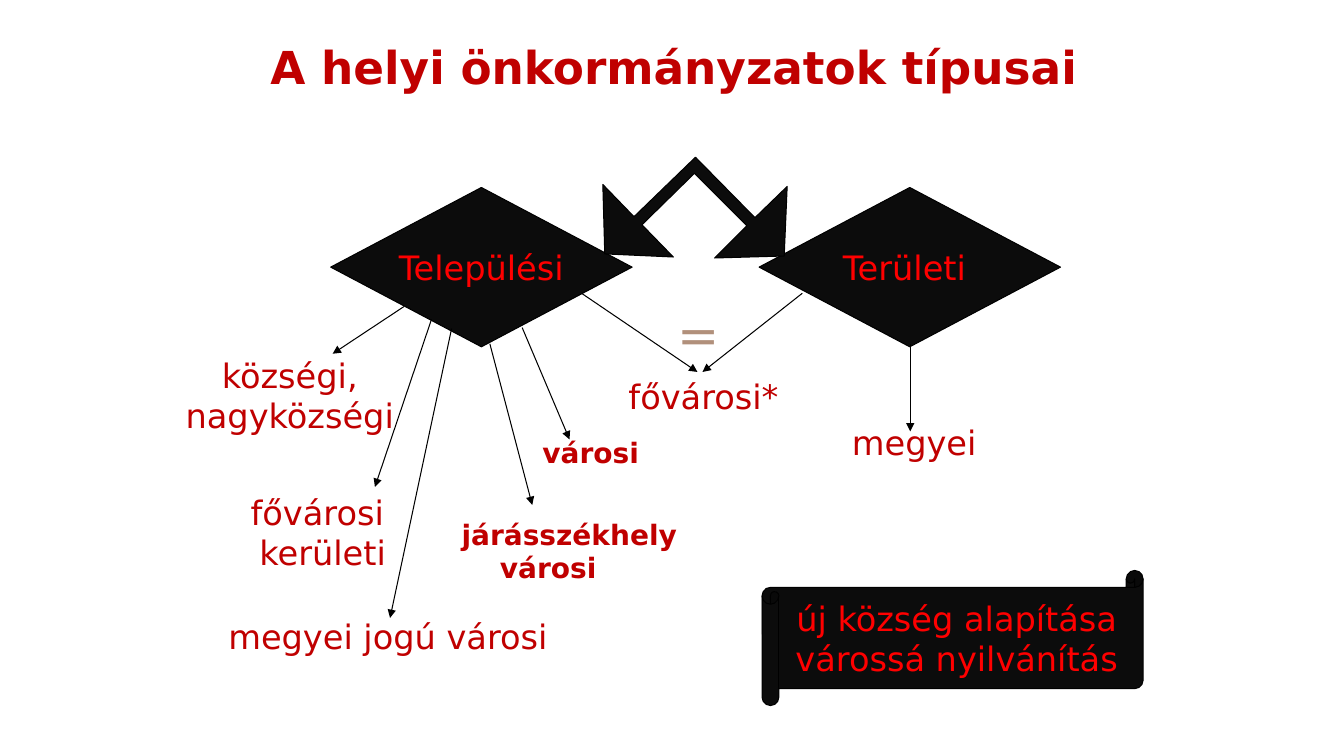
from dataclasses import dataclass

from lxml import etree
from pptx import Presentation
from pptx import util as u
from pptx.dml.color import RGBColor
from pptx.enum import shapes, text
from pptx.oxml import ns


@dataclass(frozen=True)
class Theme:
    font: str = "DejaVu Sans"
    heading: str = "C00000"
    on_dark: str = "FF0000"
    dark: str = "0C0C0C"
    line: str = "000000"
    equals: str = "B1907B"
    title_size: float = 32.4
    equals_size: float = 36
    label_size: float = 24
    small_size: float = 20
    line_width: float = 0.75


THEME = Theme()
CENTER = text.PP_ALIGN.CENTER
LEFT = text.PP_ALIGN.LEFT

# Left, top, width, height in points
DIAMONDS = [
    ("Települési", (236.2, 133.9, 215.3, 113.8)),
    ("Területi ", (542.2, 133.9, 215.3, 113.8)),
]
SCROLL = ("új község alapítása\nvárossá nyilvánítás", (544.3, 407.5, 272.2, 96.5))
LABELS = [
    ("községi, nagyközségi", (123.1, 249.8, 167.8, 65.5)),
    ("megyei jogú városi", (154.8, 436.3, 244.8, 36)),
    ("fővárosi*", (439.9, 265, 125.3, 36.7)),
    ("megyei", (568.1, 298.1, 169.9, 36)),
    ("fővárosi \nkerületi", (128.2, 347.8, 204.5, 65.5)),
]
# Start x, start y, end x, end y in points
ARROWS = [
    (288.7, 218.9, 237.6, 252.7),
    (308.2, 228.2, 267.8, 347.8),
    (322.6, 234.7, 278.6, 441.4),
    (349.9, 245.5, 380.2, 360.7),
    (373, 234, 406.8, 313.9),
    (415.4, 209.5, 498.2, 265.7),
    (573.1, 209.5, 501.8, 265.7),
    (650.2, 245.5, 650.2, 308.2),
]
DOUBLE_ARROW = [
    (432, 181.4), (481, 183.6), (458.6, 160.6), (496.1, 123.8),
    (533.5, 161.3), (510.5, 184.3), (560.2, 182.9), (562.3, 133.2),
    (539.3, 155.5), (496.8, 112.3), (452.9, 154.8), (430.6, 131.8),
]


def points(values):
    return [u.Pt(value) for value in values]


def write(shape, content, size, color, bold=False, align=CENTER, wrap=True):
    frame = shape.text_frame
    frame.text = content
    frame.word_wrap = wrap
    frame.auto_size = text.MSO_AUTO_SIZE.NONE
    for paragraph in frame.paragraphs:
        paragraph.alignment = align
        paragraph.space_before = u.Pt(0)
        for run in paragraph.runs:
            run.font.name = THEME.font
            run.font.size = u.Pt(size)
            run.font.bold = bold
            run.font.color.rgb = RGBColor.from_string(color)


def hang(shape, indent):
    """Hanging indent without a bullet."""
    for paragraph in shape.text_frame.paragraphs:
        properties = paragraph._p.get_or_add_pPr()
        properties.set("marL", str(u.Pt(indent)))
        properties.set("indent", str(-u.Pt(indent)))
        etree.SubElement(properties, ns.qn("a:buNone"))


def fill_placeholder(shape, box, content, size, align):
    shape.left, shape.top, shape.width, shape.height = points(box)
    write(shape, content, size, THEME.heading, True, align)
    shape.text_frame.paragraphs[0].line_spacing = 0.9


def paint(shape):
    shape.shadow.inherit = False
    shape.fill.solid()
    shape.fill.fore_color.rgb = RGBColor.from_string(THEME.dark)
    shape.line.color.rgb = RGBColor.from_string(THEME.line)
    shape.line.width = u.Pt(THEME.line_width)


def add_dark_shape(slide, kind, content, box):
    shape = slide.shapes.add_shape(kind, *points(box))
    paint(shape)
    write(shape, content, THEME.label_size, THEME.on_dark, wrap=False)
    shape.text_frame.vertical_anchor = text.MSO_ANCHOR.MIDDLE


def add_label(slide, content, box, size=THEME.label_size, color=THEME.heading,
              bold=False, align=CENTER):
    shape = slide.shapes.add_textbox(*points(box))
    write(shape, content, size, color, bold, align)
    return shape


def add_arrow(slide, ends):
    arrow = slide.shapes.add_connector(shapes.MSO_CONNECTOR.STRAIGHT, *points(ends))
    arrow.line.color.rgb = RGBColor.from_string(THEME.line)
    arrow.line.width = u.Pt(THEME.line_width)
    etree.SubElement(arrow.line._get_or_add_ln(), ns.qn("a:tailEnd"), type="triangle")
    etree.SubElement(arrow._element.spPr, ns.qn("a:effectLst"))


def add_outline(slide, corners):
    start, *others = [points(corner) for corner in corners]
    builder = slide.shapes.build_freeform(*start)
    builder.add_line_segments(others, close=True)
    paint(builder.convert_to_shape())


def main():
    presentation = Presentation()
    presentation.slide_width, presentation.slide_height = u.Pt(960), u.Pt(540)
    slide = presentation.slides.add_slide(presentation.slide_layouts[1])

    # Title and list item
    fill_placeholder(slide.shapes.title, (146.2, 32.4, 670.3, 35.3),
                     "A helyi önkormányzatok típusai", THEME.title_size, CENTER)
    town = slide.placeholders[1]
    fill_placeholder(town, (380.2, 310.3, 87.1, 36), "városi", THEME.small_size, LEFT)
    hang(town, 18)

    # Two main types and the double arrow between them
    for content, box in DIAMONDS:
        add_dark_shape(slide, shapes.MSO_SHAPE.DIAMOND, content, box)
    add_outline(slide, DOUBLE_ARROW)
    add_label(slide, "=", (439.9, 213.1, 118.8, 50.4), THEME.equals_size, THEME.equals)

    # Subtypes
    for content, box in LABELS:
        add_label(slide, content, box)
    district_seat = add_label(slide, "járásszékhely városi", (322.6, 365.8, 175.7, 79.2),
                              THEME.small_size, bold=True, align=LEFT)
    hang(district_seat, 27.4)
    for ends in ARROWS:
        add_arrow(slide, ends)

    # Scroll note
    add_dark_shape(slide, shapes.MSO_SHAPE.HORIZONTAL_SCROLL, *SCROLL)

    presentation.save("out.pptx")


if __name__ == "__main__":
    main()
